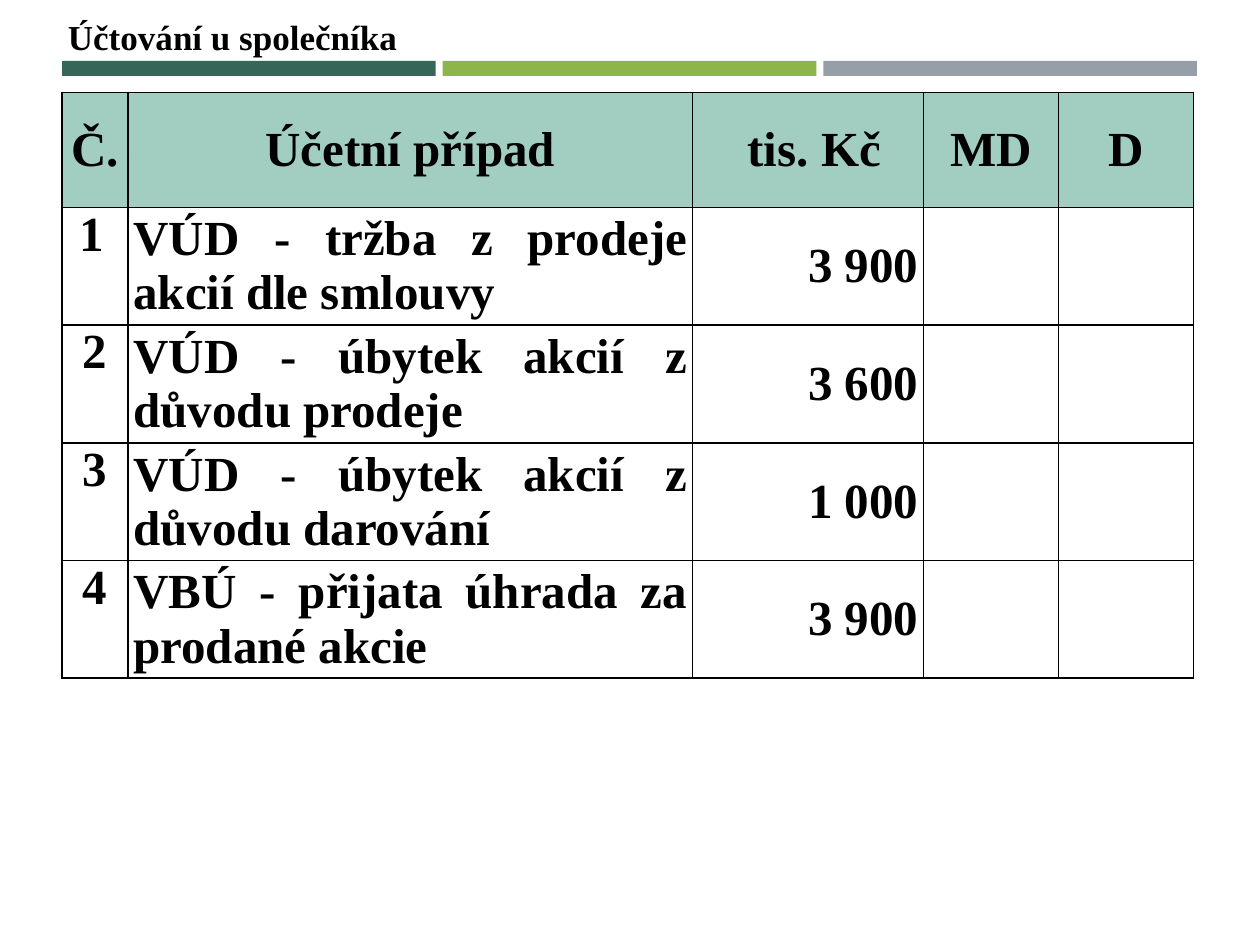
from dataclasses import dataclass

from lxml.etree import SubElement
from pptx import Presentation
from pptx.dml.color import RGBColor
from pptx.enum.shapes import MSO_SHAPE
from pptx.enum.text import MSO_ANCHOR, PP_ALIGN
from pptx.oxml.ns import qn
from pptx.util import Cm, Pt


@dataclass(frozen=True)
class Theme:
    font: str = "Times New Roman"
    title_size: int = 20
    table_size: int = 28
    text: str = "000000"
    border: str = "000000"
    header: str = "A2CEC1"
    body: str = "FFFFFF"
    bars: tuple = ("366658", "8CB64A", "969FA7")


THEME = Theme()
HEADER = ("Č.", "Účetní případ", "tis. Kč", "MD", "D")
ENTRIES = (
    ("1", "VÚD - tržba z prodeje akcií dle smlouvy", "3 900", "", ""),
    ("2", "VÚD - úbytek akcií z důvodu prodeje", "3 600", "", ""),
    ("3", "VÚD - úbytek akcií z důvodu darování", "1 000", "", ""),
    ("4", "VBÚ - přijata úhrada za prodané akcie", "3 900", "", ""),
)
COLUMN_WIDTHS = (1.33, 11.38, 4.66, 2.72, 2.72)
COLUMN_ALIGN = (PP_ALIGN.CENTER, PP_ALIGN.JUSTIFY, PP_ALIGN.RIGHT,
                PP_ALIGN.CENTER, PP_ALIGN.CENTER)
HEADER_HEIGHT, ENTRY_HEIGHT = 2.32, 2.37
CELL_MARGIN, INDENT = 0.11, 0.25


def add_run(p, text, size):
    r = p.add_run()
    r.text = text
    r.font.name = THEME.font
    r.font.size = Pt(size)
    r.font.bold = True
    r.font.color.rgb = RGBColor.from_string(THEME.text)


def add_title(slide, left, top, width, height):
    tb = slide.shapes.add_textbox(Cm(left), Cm(top), Cm(width), Cm(height))
    tf = tb.text_frame
    tf.word_wrap = False
    add_run(tf.paragraphs[0], "Účtování u společníka", THEME.title_size)


def add_bars(slide, left, top, width, height, gap=0.14):
    """Divide the box into equal coloured bars."""
    count = len(THEME.bars)
    bar_width = (width - gap * (count - 1)) / count
    for i, color in enumerate(THEME.bars):
        sp = slide.shapes.add_shape(
            MSO_SHAPE.RECTANGLE, Cm(left + i * (bar_width + gap)), Cm(top),
            Cm(bar_width), Cm(height))
        sp.shadow.inherit = False
        sp.fill.solid()
        sp.fill.fore_color.rgb = RGBColor.from_string(color)
        sp.line.fill.background()


def style_cell(cell, fill):
    cell.margin_left = cell.margin_right = Cm(CELL_MARGIN)
    cell.margin_top = cell.margin_bottom = 0
    tc_pr = cell._tc.get_or_add_tcPr()
    for side in ("a:lnL", "a:lnR", "a:lnT", "a:lnB"):
        ln = SubElement(tc_pr, qn(side), w=str(Pt(1)))
        SubElement(SubElement(ln, qn("a:solidFill")), qn("a:srgbClr"),
                   val=THEME.border)
    cell.fill.solid()
    cell.fill.fore_color.rgb = RGBColor.from_string(fill)


def add_entry_table(slide, left, top):
    rows = (HEADER,) + ENTRIES
    heights = [HEADER_HEIGHT] + [ENTRY_HEIGHT] * len(ENTRIES)
    table = slide.shapes.add_table(
        len(rows), len(HEADER), Cm(left), Cm(top),
        Cm(sum(COLUMN_WIDTHS)), Cm(sum(heights))).table
    for column, width in zip(table.columns, COLUMN_WIDTHS):
        column.width = Cm(width)
    for i, (values, height) in enumerate(zip(rows, heights)):
        table.rows[i].height = Cm(height)
        for j, value in enumerate(values):
            cell = table.cell(i, j)
            is_header = i == 0
            style_cell(cell, THEME.header if is_header else THEME.body)
            top_aligned = j == 0 and not is_header
            cell.vertical_anchor = MSO_ANCHOR.TOP if top_aligned else MSO_ANCHOR.MIDDLE
            p = cell.text_frame.paragraphs[0]
            p.alignment = PP_ALIGN.CENTER if is_header else COLUMN_ALIGN[j]
            if value:
                add_run(p, value, THEME.table_size)

    table.cell(0, 2).margin_left = Cm(CELL_MARGIN + INDENT)
    first_number = table.cell(1, 0)
    first_number.margin_left = Cm(CELL_MARGIN + INDENT)
    first_number.text_frame.paragraphs[0].alignment = PP_ALIGN.LEFT


def main():
    prs = Presentation()
    prs.slide_width, prs.slide_height = Cm(25.4), Cm(19.05)
    slide = prs.slides.add_slide(prs.slide_layouts[6])
    add_bars(slide, 1.25, 1.23, 22.88, 0.3)
    add_title(slide, 1.12, 0.18, 7.19, 1.11)
    add_entry_table(slide, 1.25, 1.86)
    prs.save("out.pptx")


if __name__ == "__main__":
    main()
